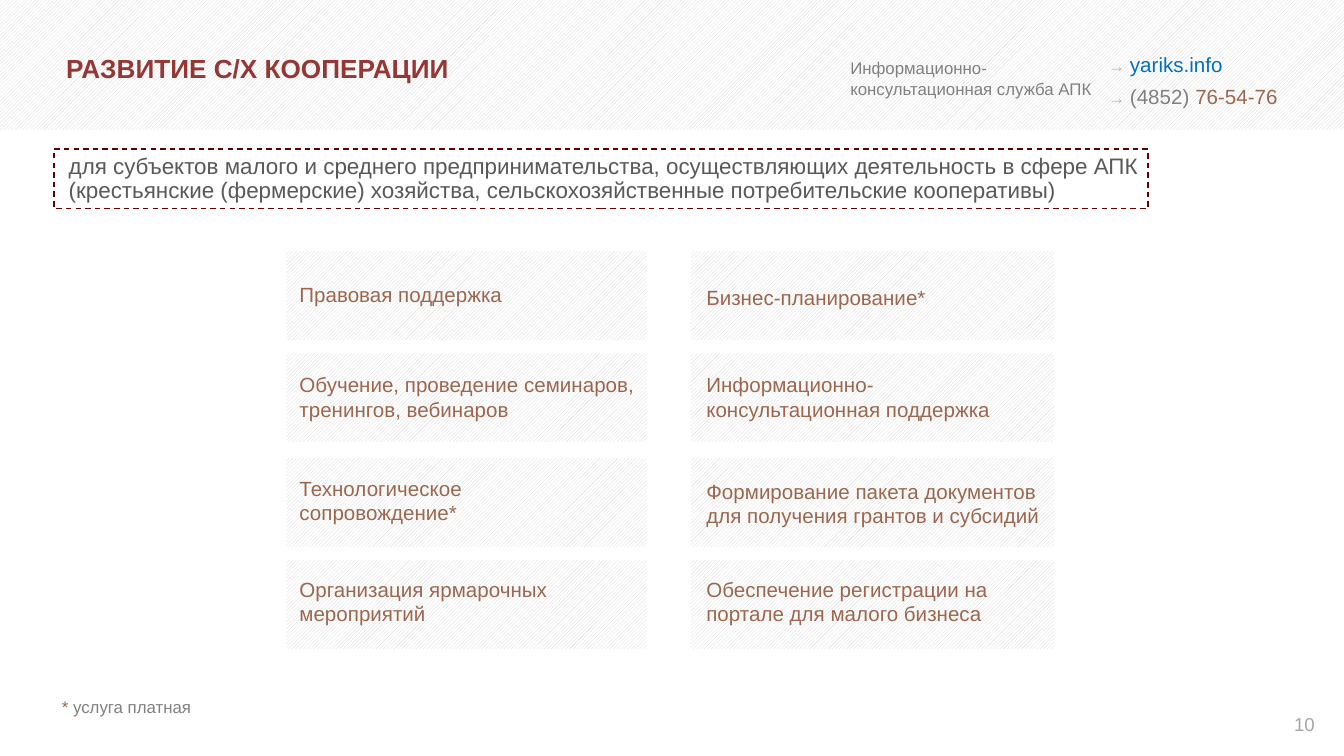
from typing import NamedTuple

from pptx import Presentation
from pptx import util as u
from pptx.dml.color import RGBColor
from pptx.enum import dml, shapes, text

FONT = "Arial"
COLORS = {
    "title": "953735", "brown": "9C674E", "arrow": "CEAD9E", "link": "0070C0",
    "grey": "808080", "dark": "595959", "number": "A6A6A6",
    "frame": "600000", "hatch": "D8D8D8", "white": "FFFFFF",
}


class Box(NamedTuple):
    left: float
    top: float
    width: float
    height: float


class Run(NamedTuple):
    text: str
    size: float
    color: str
    bold: bool = False


class Label(NamedTuple):
    text: str
    top: float
    width: float


class Column(NamedTuple):
    left: float
    width: float
    text_left: float
    labels: tuple[Label, ...]


CARD_HEIGHT = 1.68
CARD_TOPS = (4.75, 6.68, 8.66, 10.59)
COLUMNS = (
    Column(5.41, 6.81, 5.41, (
        Label("Правовая поддержка", 5.21, 5.79),
        Label("Обучение, проведение семинаров, тренингов, вебинаров", 6.91, 7.09),
        Label("Технологическое сопровождение*", 8.86, 5.79),
        Label("Организация ярмарочных мероприятий", 10.77, 5.79),
    )),
    Column(13.06, 6.86, 13.1, (
        Label("Бизнес-планирование*", 5.26, 5.79),
        Label("Информационно-консультационная поддержка", 6.91, 6.45),
        Label("Формирование пакета документов для получения грантов и субсидий", 8.92, 7.01),
        Label("Обеспечение регистрации на портале для малого бизнеса", 10.77, 6.81),
    )),
)
CONTACTS = (
    (Box(20.7, 0.86, 2.72, 0.74), (Run("yariks.info", 11, "link"),)),
    (Box(20.7, 1.45, 3.73, 0.74),
     (Run("(4852) ", 11, "grey"), Run("76-54-76", 11, "brown"))),
)


def rgb(name: str) -> RGBColor:
    return RGBColor.from_string(COLORS[name])


def place(sp, box: Box) -> None:
    sp.left, sp.top, sp.width, sp.height = map(u.Cm, box)


def write(sp, runs: tuple[Run, ...], anchor=text.MSO_ANCHOR.TOP,
          inset: tuple[float, float] = (0.25, 0.13), wrap: bool = True,
          align=text.PP_ALIGN.LEFT, spacing: float = 1.0) -> None:
    tf = sp.text_frame
    tf.word_wrap = wrap
    tf.auto_size = text.MSO_AUTO_SIZE.NONE
    tf.vertical_anchor = anchor
    tf.margin_left = tf.margin_right = u.Cm(inset[0])
    tf.margin_top = tf.margin_bottom = u.Cm(inset[1])
    p = tf.paragraphs[0]
    p.alignment = align
    p.line_spacing = spacing
    p.space_before = u.Pt(0)
    for run in runs:
        r = p.add_run()
        r.text = run.text
        r.font.name = FONT
        r.font.size = u.Pt(run.size)
        r.font.bold = run.bold
        r.font.color.rgb = rgb(run.color)


def add_text(s, box: Box, *runs: Run, **options) -> None:
    write(s.shapes.add_textbox(*map(u.Cm, box)), runs, **options)


def add_rect(s, box: Box):
    sp = s.shapes.add_shape(shapes.MSO_SHAPE.RECTANGLE, *map(u.Cm, box))
    sp.shadow.inherit = False
    return sp


def add_hatched(s, box: Box, pattern) -> None:
    sp = add_rect(s, box)
    sp.fill.patterned()
    sp.fill.pattern = pattern
    sp.fill.fore_color.rgb = rgb("hatch")
    sp.fill.back_color.rgb = rgb("white")
    sp.line.fill.background()


def add_header(s) -> None:
    middle = text.MSO_ANCHOR.MIDDLE
    add_hatched(s, Box(0, -0.08, 25.4, 2.54), dml.MSO_PATTERN.DARK_UPWARD_DIAGONAL)
    title = s.shapes.title
    s.shapes._spTree.append(title._element)
    place(title, Box(1.07, 0.91, 7.67, 0.76))
    write(title, (Run("РАЗВИТИЕ С/Х КООПЕРАЦИИ", 14, "title", True),),
          anchor=middle, inset=(0.18, 0.08))
    add_text(s, Box(15.82, 0.97, 5.33, 1.02),
             Run("Информационно-консультационная служба АПК", 9, "grey"), anchor=middle)
    for box, runs in CONTACTS:
        add_text(s, box, Run("→ ", 9, "arrow"), *runs, wrap=False)


def add_services(s) -> None:
    for column in COLUMNS:
        for top in CARD_TOPS:
            add_hatched(s, Box(column.left, top, column.width, CARD_HEIGHT),
                        dml.MSO_PATTERN.LIGHT_UPWARD_DIAGONAL)
        for label in column.labels:
            add_text(s, Box(column.text_left, label.top, label.width, 1.2),
                     Run(label.text, 11, "brown"))


def add_notes(s) -> None:
    style = dict(anchor=text.MSO_ANCHOR.MIDDLE, inset=(0.28, 0.15), spacing=0.9)
    add_text(s, Box(0.89, 13.03, 10.8, 0.71),
             Run("* ", 9, "brown"), Run("услуга платная", 9, "grey"), **style)
    add_text(s, Box(1.02, 2.84, 20.88, 1.09),
             Run("для субъектов малого и среднего предпринимательства, "
                 "осуществляющих деятельность в сфере АПК "
                 "(крестьянские (фермерские) хозяйства, "
                 "сельскохозяйственные потребительские кооперативы)", 12, "dark"), **style)
    frame = add_rect(s, Box(1.02, 2.82, 20.68, 1.12))
    frame.fill.background()
    frame.line.color.rgb = rgb("frame")
    frame.line.width = u.Pt(0.75)
    frame.line.dash_style = dml.MSO_LINE.DASH
    add_text(s, Box(23.5, 13.31, 1.6, 0.76), Run("10", 10, "number"),
             anchor=text.MSO_ANCHOR.MIDDLE, align=text.PP_ALIGN.RIGHT)


def main() -> None:
    prs = Presentation()
    prs.slide_width, prs.slide_height = u.Cm(25.4), u.Cm(14.29)
    s = prs.slides.add_slide(prs.slide_layouts[5])
    add_header(s)
    add_services(s)
    add_notes(s)
    prs.save("out.pptx")


if __name__ == "__main__":
    main()
